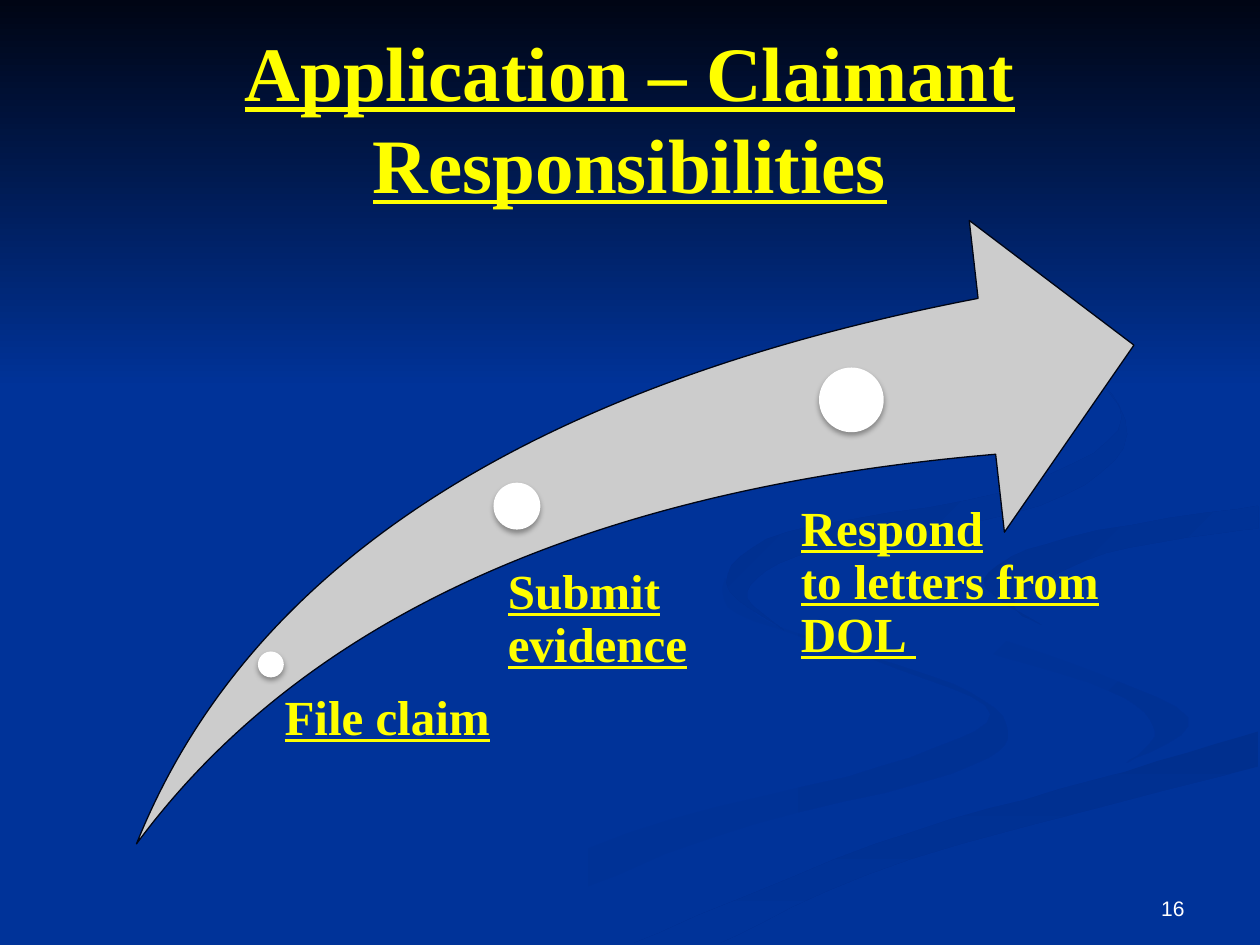
from dataclasses import dataclass

from lxml import etree
from pptx import Presentation, util as u
from pptx.dml.color import RGBColor
from pptx.enum import shapes, text
from pptx.oxml import ns


@dataclass(frozen=True)
class Theme:
    night: str = "000514"
    blue: str = "003399"
    shade: str = "002F8E"
    haze: str = "003193"
    yellow: str = "FFFF00"
    white: str = "FFFFFF"
    grey: str = "CCCCCC"
    serif: str = "Times New Roman"
    sans: str = "Arial"
    title_size: int = 44
    label_size: int = 28
    number_size: int = 12


THEME = Theme()
WIDTH, HEIGHT = 720, 540
SKY_HEIGHT = 222
CURVE_STEPS = 6
TITLE = "Application – Claimant Responsibilities"
TITLE_BOX = (12, 21.6, 696, 90)
ARROW_BOX = (78, 126, 570, 356.25)
NUMBER = "16"
NUMBER_BOX = (516, 492, 168, 37.5)

STEPS = [
    {"label": "File claim", "dot": (147.4, 372.3, 14.8),
     "box": (154.8, 396, 133, 70), "inset": 7.85},
    {"label": "Submit evidence", "dot": (282, 275.8, 26.8),
     "box": (276, 324, 149, 57.6), "inset": 14.2},
    {"label": "Respond\tto letters from DOL ", "dot": (468, 210, 37),
     "box": (438, 288, 226.8, 45.4), "inset": 19.6, "tab": 201.6},
]

SWIRLS = [
    ((THEME.blue, THEME.haze, 0),
     [(414, 330), (422, 351), (502, 378), (566, 408), (503, 438), (359, 476), (216, 539)],
     [(260, 539), (406, 479), (544, 442), (576, 418), (545, 391), (442, 357), (414, 330)]),
    ((THEME.blue, THEME.haze, 45),
     [(521, 334), (544, 364), (634, 395), (660, 418), (644, 436)],
     [(644, 436), (679, 410), (598, 374), (536, 353), (521, 334)]),
    ((THEME.shade, THEME.blue, 90),
     [(362, 539), (501, 482), (624, 446), (719, 418)],
     [(719, 438), (520, 491), (411, 539)]),
    ((THEME.shade, THEME.blue, 45),
     [(719, 289), (611, 307), (562, 331), (595, 357)],
     [(595, 357), (580, 343), (632, 316), (719, 302)]),
    ((THEME.shade, THEME.blue, 45),
     [(549, 168), (616, 205), (639, 246), (570, 282), (450, 304), (415, 333), (448, 360)],
     [(448, 360), (427, 338), (467, 314), (594, 289), (644, 248), (607, 198), (549, 168)]),
]


def points(values):
    return [u.Pt(value) for value in values]


def blend(a, b, c, d, t):
    return b + t * (c - a + t * (2 * a - 5 * b + 4 * c - d + t * (3 * (b - c) + d - a))) / 2


def curve(knots):
    padded = [knots[0], *knots, knots[-1]]
    spots = [knots[0]]
    for near in zip(padded, padded[1:], padded[2:], padded[3:]):
        for step in range(1, CURVE_STEPS + 1):
            spots.append(tuple(blend(*axis, step / CURVE_STEPS) for axis in zip(*near)))
    return spots


def paint(shape, start, end=None, angle=0):
    shape.shadow.inherit = False
    shape.line.fill.background()
    if end is None:
        shape.fill.solid()
        shape.fill.fore_color.rgb = RGBColor.from_string(start)
        return
    shape.fill.gradient()
    shape.fill.gradient_angle = -angle % 360
    for stop, colour in zip(shape.fill.gradient_stops, (start, end)):
        stop.color.rgb = RGBColor.from_string(colour)


def write(frame, wording, size, font, colour, heading=True):
    frame.word_wrap = True
    frame.auto_size = text.MSO_AUTO_SIZE.NONE
    para = frame.paragraphs[0]
    para.text = wording
    for span in para.runs:
        span.font.size = u.Pt(size)
        span.font.name = font
        span.font.color.rgb = RGBColor.from_string(colour)
        span.font.bold = span.font.underline = heading
    return para


def add_backdrop(page):
    page.background.fill.solid()
    page.background.fill.fore_color.rgb = RGBColor.from_string(THEME.blue)
    for colours, *edges in SWIRLS:
        outline = [spot for edge in edges for spot in curve(edge)]
        builder = page.shapes.build_freeform(*outline[0], scale=u.Pt(1))
        builder.add_line_segments(outline[1:], close=True)
        paint(builder.convert_to_shape(), *colours)
    sky = page.shapes.add_shape(shapes.MSO_SHAPE.RECTANGLE, *points((0, 0, WIDTH, SKY_HEIGHT)))
    paint(sky, THEME.night, THEME.blue, 90)


def add_title(page):
    title = page.shapes.title
    title.left, title.top, title.width, title.height = points(TITLE_BOX)
    para = write(title.text_frame, TITLE, THEME.title_size, THEME.serif, THEME.yellow)
    para.alignment = text.PP_ALIGN.CENTER
    title.text_frame.vertical_anchor = text.MSO_ANCHOR.MIDDLE
    page.shapes._spTree.append(title._element)


def add_arrow(page):
    arrow = page.shapes.add_shape(shapes.MSO_SHAPE.SWOOSH_ARROW, *points(ARROW_BOX))
    paint(arrow, THEME.grey)
    arrow.adjustments[0] = arrow.adjustments[1] = 0.25
    arrow.line.color.rgb = RGBColor.from_string(THEME.night)
    arrow.line.width = u.Pt(0.75)


def add_dot(page, left, top, size):
    dot = page.shapes.add_shape(shapes.MSO_SHAPE.OVAL, *points((left, top, size, size)))
    paint(dot, THEME.white)
    effects = dot._element.spPr.find(ns.qn("a:effectLst"))
    shadow = etree.SubElement(effects, ns.qn("a:outerShdw"), blurRad=str(u.Pt(3.1)),
                              dist=str(u.Pt(1.8)), dir="5400000", rotWithShape="0")
    colour = etree.SubElement(shadow, ns.qn("a:srgbClr"), val="000000")
    etree.SubElement(colour, ns.qn("a:alpha"), val="35000")


def add_step(page, step):
    add_dot(page, *step["dot"])
    frame = page.shapes.add_textbox(*points(step["box"])).text_frame
    frame.margin_left = u.Pt(step["inset"])
    frame.margin_top = frame.margin_right = frame.margin_bottom = 0
    para = write(frame, step["label"], THEME.label_size, THEME.serif, THEME.yellow)
    para.line_spacing = 0.9
    if "tab" in step:
        stops = etree.SubElement(para._p.get_or_add_pPr(), ns.qn("a:tabLst"))
        etree.SubElement(stops, ns.qn("a:tab"), pos=str(u.Pt(step["tab"])), algn="l")


def add_number(page):
    frame = page.shapes.add_textbox(*points(NUMBER_BOX)).text_frame
    para = write(frame, NUMBER, THEME.number_size, THEME.sans, THEME.white, heading=False)
    para.alignment = text.PP_ALIGN.RIGHT
    frame.vertical_anchor = text.MSO_ANCHOR.BOTTOM


def main():
    deck = Presentation()
    deck.slide_width, deck.slide_height = points((WIDTH, HEIGHT))
    page = deck.slides.add_slide(deck.slide_layouts[5])
    add_backdrop(page)
    add_title(page)
    add_arrow(page)
    for step in STEPS:
        add_step(page, step)
    add_number(page)
    deck.save("out.pptx")


if __name__ == "__main__":
    main()
